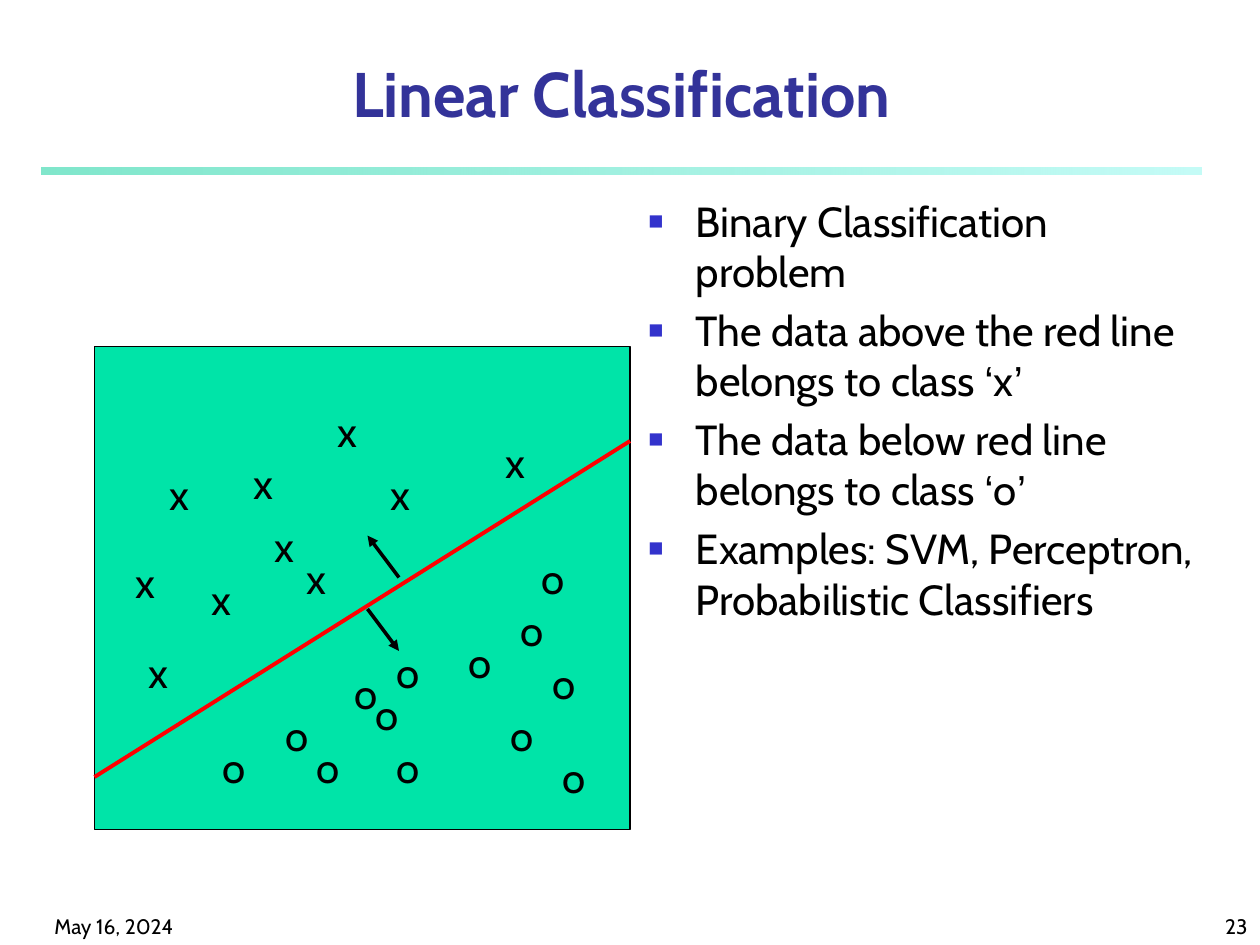
"""Build the Linear Classification slide: a two-class scatter split by a line, beside four bullets."""
from dataclasses import dataclass

from lxml.etree import SubElement
from pptx import Presentation
from pptx.dml.color import RGBColor
from pptx.enum.shapes import MSO_CONNECTOR, MSO_SHAPE
from pptx.enum.text import MSO_ANCHOR, MSO_AUTO_SIZE, PP_ALIGN
from pptx.oxml.ns import qn
from pptx.util import Pt


@dataclass(frozen=True)
class Theme:
    font: str = "Cabin"
    quote_font: str = "Arial"
    ink: str = "000000"
    title: str = "333399"
    bullet: str = "3333CC"
    plot: str = "00E4A8"
    boundary: str = "FF0000"
    rule_start: str = "00CE98"
    rule_end: str = "8FF9EF"
    title_size: int = 36
    body_size: int = 24
    footer_size: int = 12


theme = Theme()
deck = Presentation()
deck.slide_width, deck.slide_height = Pt(720), Pt(540)
slide = deck.slides.add_slide(deck.slide_layouts[6])


def add_text(box, paragraphs, size, color=theme.ink, bold=None, align=None, anchor=MSO_ANCHOR.TOP, wrap=True):
    """Add a text box whose paragraphs are lists of run strings."""
    frame = slide.shapes.add_textbox(*map(Pt, box)).text_frame
    frame.word_wrap = wrap
    frame.auto_size = MSO_AUTO_SIZE.NONE if wrap else MSO_AUTO_SIZE.SHAPE_TO_FIT_TEXT
    frame.vertical_anchor = anchor
    for index, pieces in enumerate(paragraphs):
        paragraph = frame.add_paragraph() if index else frame.paragraphs[0]
        paragraph.alignment = align
        for piece in pieces:
            run = paragraph.add_run()
            run.text = piece
            run.font.name = theme.quote_font if piece in "‘’" else theme.font
            run.font.size = Pt(size)
            run.font.bold = bold
            run.font.color.rgb = RGBColor.from_string(color)
    return frame


def add_line(start, end, color, width, arrow=False):
    """Draw a straight line, with an arrowhead at its end if asked."""
    line = slide.shapes.add_connector(MSO_CONNECTOR.STRAIGHT, *map(Pt, start + end))
    line.line.color.rgb = RGBColor.from_string(color)
    line.line.width = Pt(width)
    if arrow:
        SubElement(line.line._get_or_add_ln(), qn("a:tailEnd"), type="triangle")
    SubElement(line._element.spPr, qn("a:effectLst"))


rule = slide.shapes.add_shape(MSO_SHAPE.RECTANGLE, Pt(24), Pt(96), Pt(662.4), Pt(4))
rule.shadow.inherit = False
rule.line.fill.background()
rule.fill.gradient()
rule.fill.gradient_angle = 0
rule_stops = ((0, theme.rule_start, 50000), (1, theme.rule_end, 52000))
for stop, (position, color, alpha) in zip(rule.fill.gradient_stops, rule_stops):
    stop.position = position
    stop.color.rgb = RGBColor.from_string(color)
for tint, (_, _, alpha) in zip(rule._element.spPr.iter(qn("a:srgbClr")), rule_stops):
    SubElement(tint, qn("a:alpha"), val=str(alpha))

for left, label, align in ((24, "May 16, 2024", PP_ALIGN.LEFT), (570, "23", PP_ALIGN.RIGHT)):
    add_text((left, 510, 150, 30), [[label]], theme.footer_size, align=align, anchor=MSO_ANCHOR.BOTTOM)

add_text((24, 30, 662, 48), [["Linear Classification"]], theme.title_size, theme.title,
         bold=True, align=PP_ALIGN.CENTER, anchor=MSO_ANCHOR.BOTTOM)

points = [
    ["Binary Classification problem"],
    ["The data above the red line belongs to class ", "‘", "x", "’"],
    ["The data below red line belongs to class ", "‘", "o", "’"],
    ["Examples: SVM, Perceptron, Probabilistic Classifiers"],
]
body = add_text((363.5, 108, 327, 402), points, theme.body_size)
for paragraph in body.paragraphs:
    paragraph.space_before = Pt(4.8)
    properties = paragraph._p.get_or_add_pPr()
    properties.set("marL", str(Pt(27)))
    properties.set("indent", str(Pt(-27)))
    bullet_color = SubElement(properties, qn("a:buClr"))
    SubElement(bullet_color, qn("a:srgbClr"), val=theme.bullet)
    SubElement(properties, qn("a:buSzPct"), val="60000")
    SubElement(properties, qn("a:buFont"), typeface=theme.quote_font)
    SubElement(properties, qn("a:buChar"), char="■")

plot = slide.shapes.add_shape(MSO_SHAPE.RECTANGLE, Pt(54), Pt(198), Pt(306), Pt(276))
plot.shadow.inherit = False
plot.fill.solid()
plot.fill.fore_color.rgb = RGBColor.from_string(theme.plot)
plot.line.color.rgb = RGBColor.from_string(theme.ink)
plot.line.width = Pt(0.75)

add_line((54, 444), (360, 252), theme.boundary, 2.25)

samples = {
    "x": [(70.5, 314.5), (282, 246), (138, 258), (168, 312), (216, 264),
          (90, 264), (114, 324), (186, 228), (150, 294), (78, 366)],
    "o": [(195.5, 378), (207.5, 390), (219.5, 366), (156, 402), (219.5, 420),
          (284.5, 402), (302.5, 312), (260.5, 360), (120, 420), (174, 420),
          (308.5, 372), (290.5, 342), (314.5, 426)],
}
for mark, places in samples.items():
    for left, top in places:
        add_text((left, top, 27, 36), [[mark]], theme.body_size, wrap=False)

add_line((228, 330), (210, 306), theme.ink, 2, arrow=True)
add_line((210, 348), (228, 372), theme.ink, 2, arrow=True)

deck.save("out.pptx")
